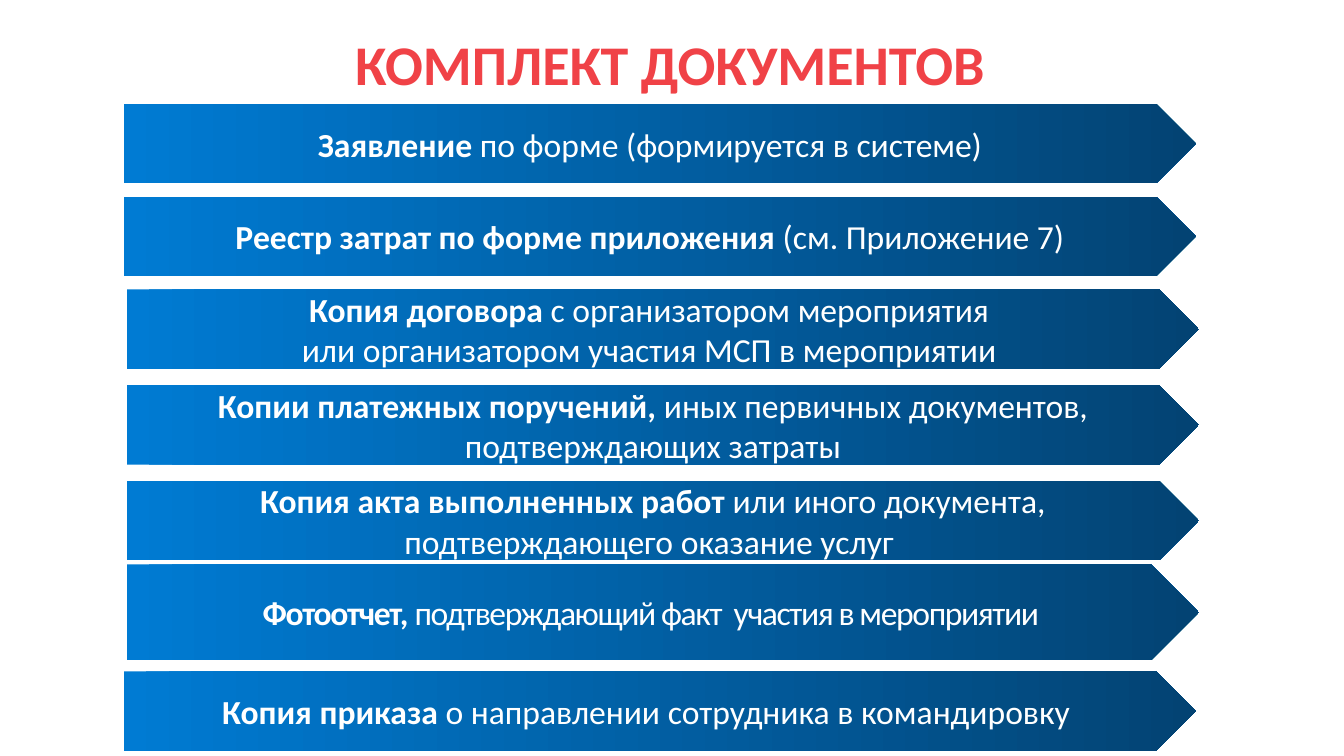
import pptx
import pptx.util
import pptx.dml.color
import pptx.enum.shapes
import pptx.enum.text

Inches = pptx.util.Inches
Pt = pptx.util.Pt


def paint(code):
    return pptx.dml.color.RGBColor.from_string(code)


class Deck:
    font = "Calibri"
    stops = ("007BD3", "034373")

    def __init__(self, prs):
        self.slide = prs.slides.add_slide(prs.slide_layouts[6])

    def style(self, item, values):
        for name, value in values.items():
            setattr(item, name, value)

    def label(self, frame, lines, size, color, gap=0):
        self.style(frame, {
            "word_wrap": True,
            "vertical_anchor": pptx.enum.text.MSO_ANCHOR.MIDDLE,
        })
        for i, line in enumerate(lines):
            para = frame.add_paragraph() if i else frame.paragraphs[0]
            para.alignment = pptx.enum.text.PP_ALIGN.CENTER
            for text, bold in line:
                run = para.add_run()
                run.text = text
                self.style(run.font, {"name": self.font, "size": Pt(size), "bold": bold})
                run.font.color.rgb = paint(color)
                if gap:
                    run._r.get_or_add_rPr().set("spc", str(gap * 100))

    def title(self, text, left, top, width, height):
        box = self.slide.shapes.add_textbox(
            Inches(left), Inches(top), Inches(width), Inches(height))
        self.label(box.text_frame, [[(text, True)]], 40, "F04247")
        box.text_frame.paragraphs[0].line_spacing = 0.96

    def banner(self, lines, left, top, height=0.79, gap=0):
        shape = self.slide.shapes.add_shape(
            pptx.enum.shapes.MSO_SHAPE.PENTAGON,
            Inches(left), Inches(top), Inches(10.63), Inches(height))
        shape.shadow.inherit = False
        shape.line.fill.background()
        shape.fill.gradient()
        shape.fill.gradient_angle = 0
        for stop, code in zip(shape.fill.gradient_stops, self.stops):
            stop.color.rgb = paint(code)
        self.label(shape.text_frame, lines, 24, "FFFFFF", gap)


def main():
    prs = pptx.Presentation()
    prs.slide_width = Inches(13.33)
    prs.slide_height = Inches(7.5)
    deck = Deck(prs)
    deck.title("КОМПЛЕКТ ДОКУМЕНТОВ", -0.02, -0.06, 13.33, 1.43)

    outer, inner = 1.23, 1.26
    papers = [
        (outer, 1.03, [[("Заявление", True), (" по форме (формируется в системе)", False)]]),
        (outer, 1.95, [[("Реестр затрат по форме приложения ", True),
                        ("(см. Приложение 7)", False)]]),
        (inner, 2.87, [[("Копия договора ", True), ("с организатором мероприятия ", False)],
                       [("или организатором участия МСП в мероприятии ", False)]]),
        (inner, 3.82, [[("Копии платежных поручений, ", True),
                        ("иных первичных документов, подтверждающих затраты", False)]]),
        (inner, 4.77, [[("Копия акта выполненных работ ", True),
                        ("или иного документа, подтверждающего оказание услуг ", False)]]),
        (outer, 6.66, [[("Копия приказа ", True),
                        ("о направлении сотрудника в командировку ", False)]]),
    ]
    for left, top, lines in papers:
        deck.banner(lines, left, top)
    deck.banner([[("Фотоотчет, ", True),
                  ("подтверждающий факт  участия в мероприятии", False)]],
                inner, 5.6, height=0.95, gap=-1)
    prs.save("out.pptx")


if __name__ == "__main__":
    main()
